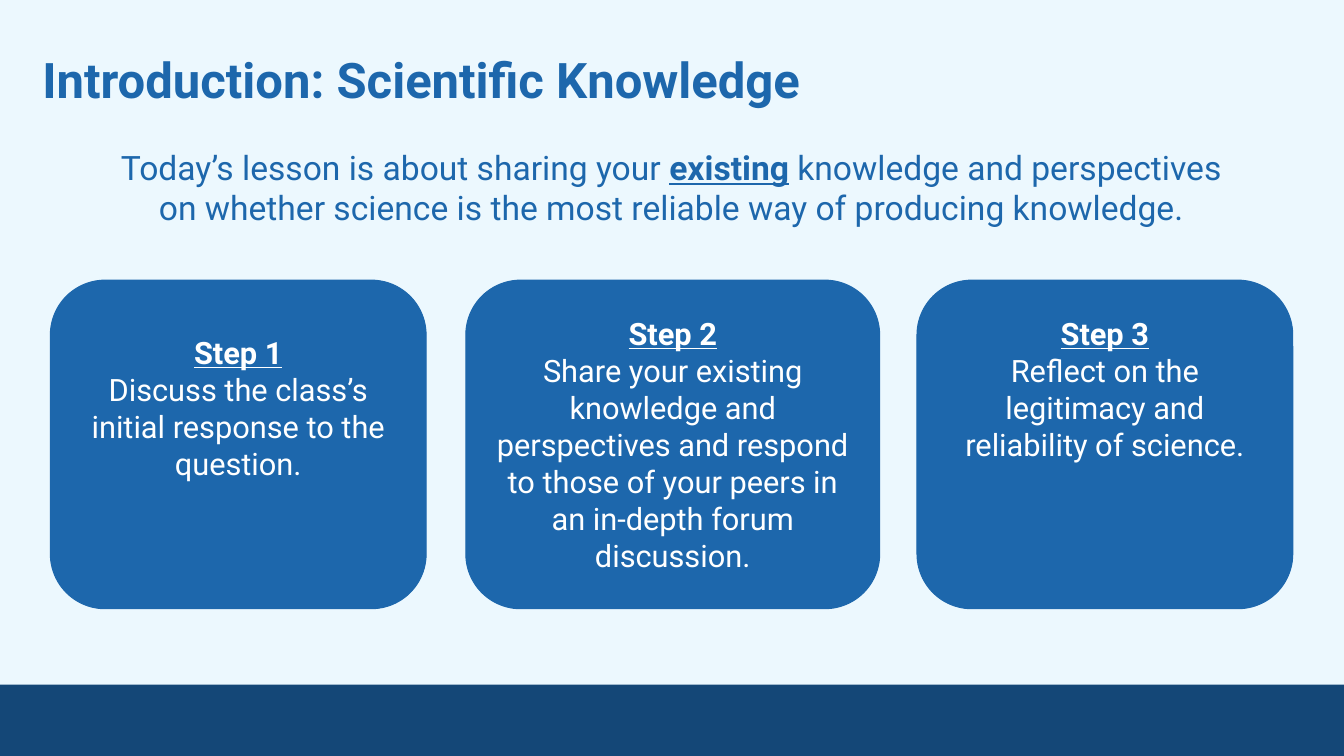
from pptx import Presentation
from pptx.dml.color import RGBColor
from pptx.enum.shapes import MSO_SHAPE
from pptx.enum.text import MSO_ANCHOR, PP_ALIGN
from pptx.util import Cm, Pt

RECTANGLE, ROUNDED = MSO_SHAPE.RECTANGLE, MSO_SHAPE.ROUNDED_RECTANGLE
TOP, MIDDLE = MSO_ANCHOR.TOP, MSO_ANCHOR.MIDDLE
LEFT, CENTER = PP_ALIGN.LEFT, PP_ALIGN.CENTER

# Content
TITLE = "Introduction: Scientific Knowledge"
INTRO = [
    ("Today’s lesson is about sharing your ", False),
    ("existing", True),
    (" knowledge and perspectives on whether science is the most reliable "
     "way of producing knowledge.", False),
]
# Heading, body, card left, card width, space above the text (cm)
STEPS = [
    ("Step 1", "Discuss the class’s initial response to the question.",
     1.27, 9.47, 0.94),
    ("Step 2", "Share your existing knowledge and perspectives and respond to "
     "those of your peers in an in-depth forum discussion.",
     11.74, 10.43, 0.47),
    ("Step 3", "Reflect on the legitimacy and reliability of science.",
     23.11, 9.47, 0.47),
]

# Look
FONT = "Roboto"
PALE, BLUE, NAVY, WHITE = "ECF8FE", "1D67AC", "144777", "FFFFFF"
PAGE_WIDTH, PAGE_HEIGHT = 33.87, 19.05
FOOTER_TOP = 17.25
CARD_TOP, CARD_HEIGHT = 7.06, 8.28


def paint(color_format, color):
    color_format.rgb = RGBColor.from_string(color)


def add_block(kind, left, top, width, height, color):
    block = page.shapes.add_shape(
        kind, Cm(left), Cm(top), Cm(width), Cm(height))
    block.shadow.inherit = False
    block.fill.solid()
    paint(block.fill.fore_color, color)
    paint(block.line.color, color)
    block.line.width = Pt(0.75)
    return block


def write(box, paragraphs, size, color, align, anchor, inset, above):
    """Fill a box with paragraphs, each a list of (text, underlined) spans."""
    frame = box.text_frame
    frame.word_wrap = True
    frame.vertical_anchor = anchor
    frame.margin_left = frame.margin_right = frame.margin_bottom = Cm(inset)
    frame.margin_top = Cm(above)
    for index, spans in enumerate(paragraphs):
        para = frame.add_paragraph() if index else frame.paragraphs[0]
        para.alignment = align
        para.font.name = FONT
        para.font.size = Pt(size)
        paint(para.font.color, color)
        for text, underlined in spans:
            span = para.add_run()
            span.text = text
            if underlined:
                span.font.bold = span.font.underline = True
    return frame


deck = Presentation()
deck.slide_width, deck.slide_height = Cm(PAGE_WIDTH), Cm(PAGE_HEIGHT)
page = deck.slides.add_slide(deck.slide_layouts[6])
page.background.fill.solid()
paint(page.background.fill.fore_color, PALE)

# Footer band
footer = add_block(RECTANGLE, 0, FOOTER_TOP, PAGE_WIDTH,
                   PAGE_HEIGHT - FOOTER_TOP, NAVY)
footer.line.fill.background()

# Title and introduction
title = page.shapes.add_textbox(Cm(0.74), Cm(0.89), Cm(30.96), Cm(2.18))
title_frame = write(title, [[(TITLE, False)]], 35, BLUE, LEFT, MIDDLE,
                    0.33, 0.33)
title_frame.paragraphs[0].font.bold = True

intro = page.shapes.add_textbox(Cm(2.31), Cm(3.45), Cm(29.21), Cm(3))
write(intro, [INTRO], 24, BLUE, CENTER, TOP, 0.25, 0.25)

# Step cards
for heading, body, left, width, above in STEPS:
    card = add_block(ROUNDED, left, CARD_TOP, width, CARD_HEIGHT, BLUE)
    write(card, [[(heading, True)], [(body, False)]], 22, WHITE, CENTER, TOP,
          0.25, above)

deck.save("out.pptx")
